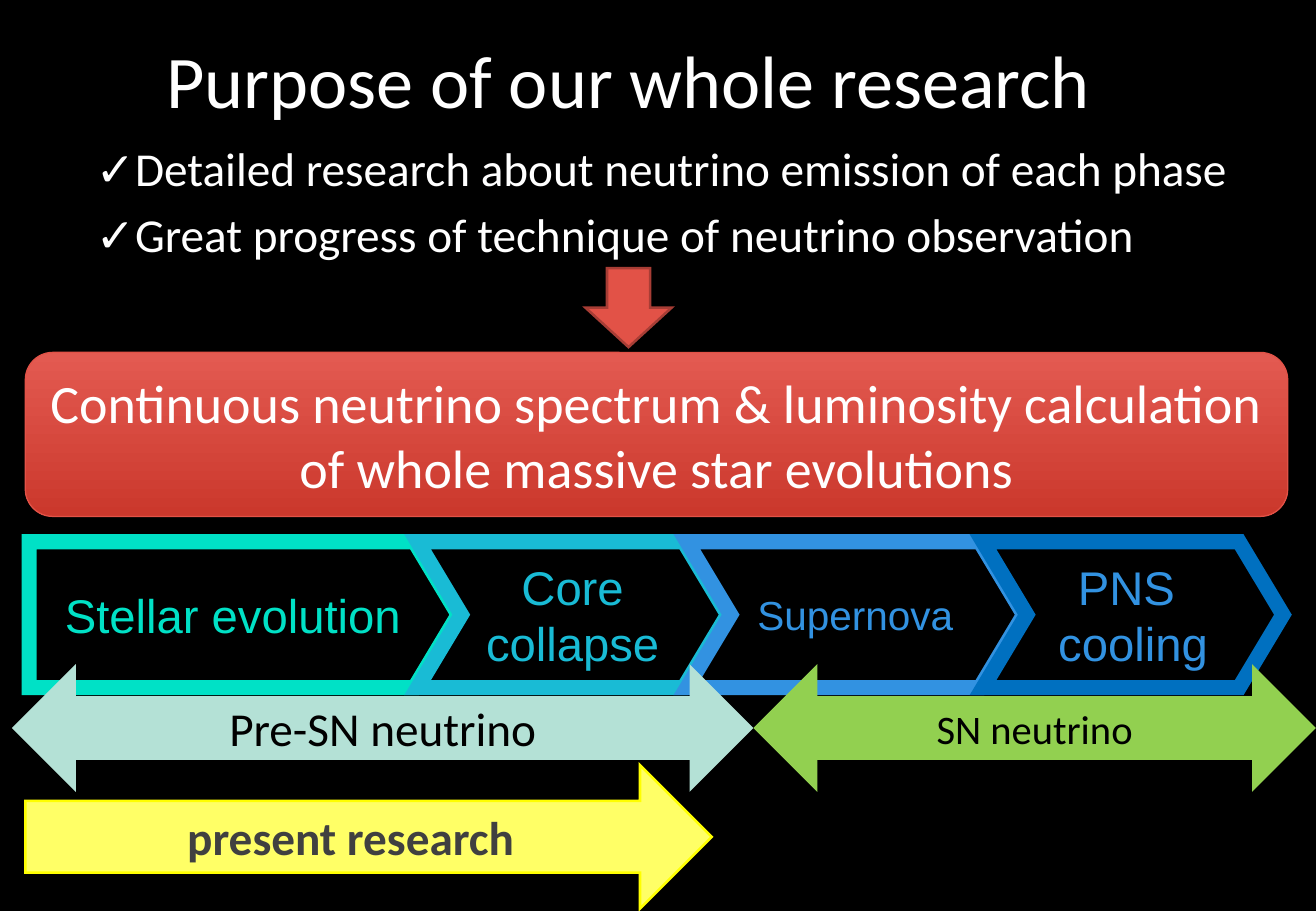
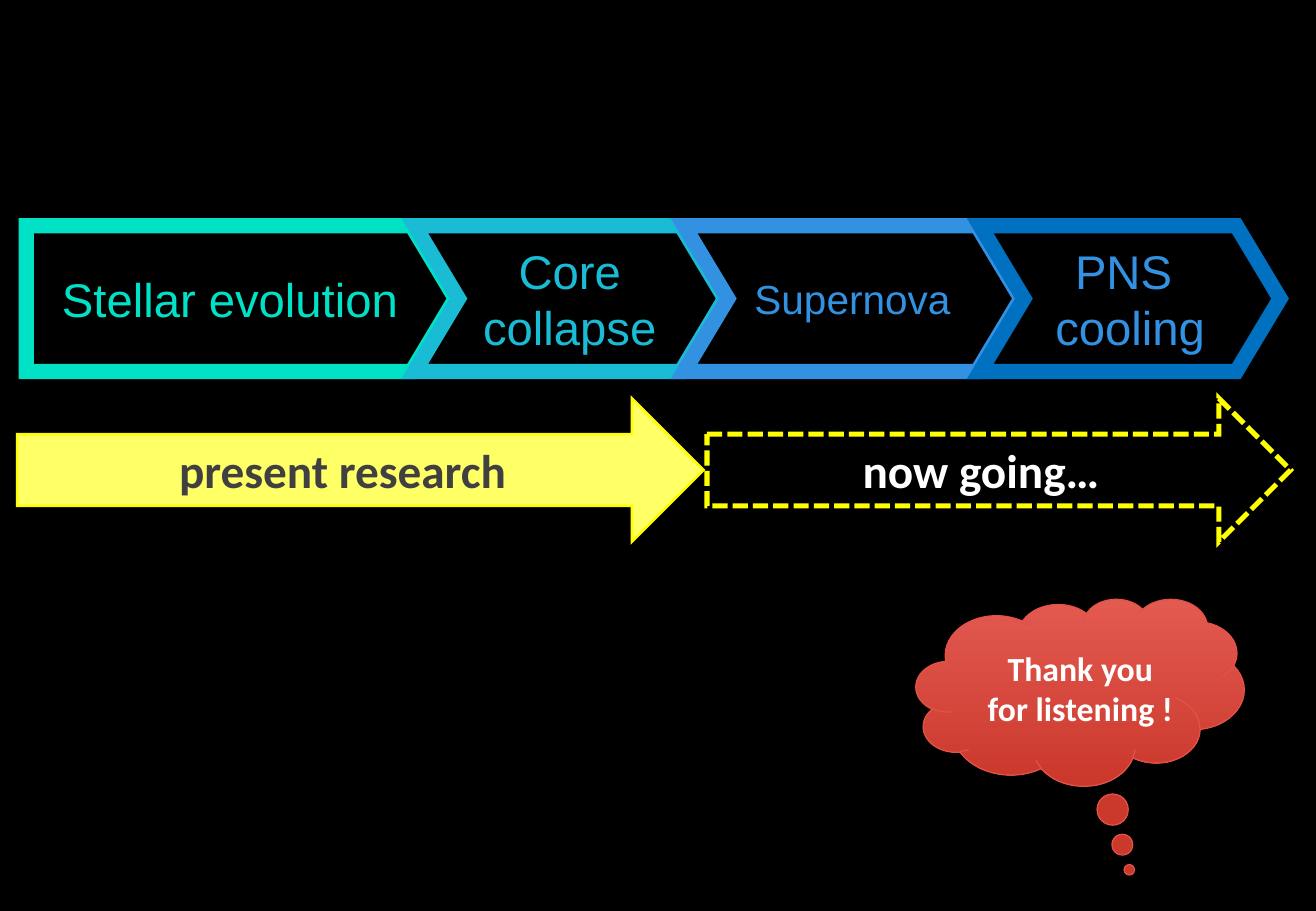
from dataclasses import dataclass
from typing import Optional

from lxml import etree
from pptx import Presentation
from pptx.dml.color import RGBColor
from pptx.enum import dml, shapes, text
from pptx.oxml.ns import qn
from pptx.util import Cm, Pt

BLACK = RGBColor(0x00, 0x00, 0x00)
WHITE = RGBColor(0xFF, 0xFF, 0xFF)
GREY = RGBColor(0x40, 0x40, 0x40)
RED = RGBColor(0xE2, 0x52, 0x47)
RED_DARK = RGBColor(0xA7, 0x3D, 0x35)
RED_TOP = RGBColor(0xE3, 0x5A, 0x51)
RED_BOTTOM = RGBColor(0xCB, 0x38, 0x2C)
TEAL = RGBColor(0x00, 0xE1, 0xC6)
CYAN = RGBColor(0x19, 0xBB, 0xD5)
SKY = RGBColor(0x32, 0x92, 0xE1)
BLUE = RGBColor(0x00, 0x70, 0xC0)
MINT = RGBColor(0xB4, 0xE1, 0xD6)
GREEN = RGBColor(0x92, 0xD0, 0x50)
YELLOW = RGBColor(0xFF, 0xFF, 0x00)
YELLOW_PALE = RGBColor(0xFF, 0xFF, 0x66)

MSO = shapes.MSO_SHAPE
STAGE_HEIGHT, STAGE_OVERLAP = 3.05, 0.85
RESEARCH_HEIGHT = 3.0


@dataclass(frozen=True)
class Font:
    size: float
    color: RGBColor = WHITE
    name: str = "Calibri"
    bold: bool = False


@dataclass(frozen=True)
class Paint:
    """One fill colour is solid, two run from top to bottom, none is empty."""
    fills: tuple[RGBColor, ...] = ()
    line: Optional[RGBColor] = None
    width: float = 0.75
    dashed: bool = False


@dataclass(frozen=True)
class Box:
    """Position and size in centimetres."""
    left: float
    top: float
    width: float
    height: float

    def lengths(self):
        return Cm(self.left), Cm(self.top), Cm(self.width), Cm(self.height)


@dataclass(frozen=True)
class Stage:
    lines: tuple[str, ...]
    width: float
    outline: RGBColor
    font: Font


RED_PANEL = Paint((RED_TOP, RED_BOTTOM), RED)
DONE = Paint((YELLOW_PALE,), YELLOW, 1.5)
ONGOING = Paint((), YELLOW, 3, dashed=True)

STAGES = (
    Stage(("Stellar evolution",), 8.97, TEAL, Font(28, TEAL, "Arial")),
    Stage(("Core", "collapse"), 6.48, CYAN, Font(28, CYAN, "Arial")),
    Stage(("Supernova",), 7.04, SKY, Font(24, SKY, "Arial")),
    Stage(("PNS ", "cooling"), 6.27, BLUE, Font(28, SKY, "Arial")),
)


def write(sp, lines: tuple[str, ...], font: Font,
          align=text.PP_ALIGN.CENTER, anchor=text.MSO_ANCHOR.MIDDLE,
          before: float = 0) -> None:
    tf = sp.text_frame
    tf.word_wrap = True
    tf.vertical_anchor = anchor
    for i, line in enumerate(lines):
        p = tf.add_paragraph() if i else tf.paragraphs[0]
        p.text = line
        p.alignment = align
        p.space_before = Pt(before)
        p.font.size = Pt(font.size)
        p.font.name = font.name
        p.font.bold = font.bold
        p.font.color.rgb = font.color


def paint(sp, look: Paint) -> None:
    sp.shadow.inherit = False
    if len(look.fills) == 2:
        sp.fill.gradient()
        sp.fill.gradient_angle = 270
        for position, (stop, color) in enumerate(zip(sp.fill.gradient_stops, look.fills)):
            stop.position = position
            stop.color.rgb = color
    elif look.fills:
        sp.fill.solid()
        sp.fill.fore_color.rgb = look.fills[0]
    else:
        sp.fill.background()
    if look.line is None:
        sp.line.fill.background()
        return
    sp.line.color.rgb = look.line
    sp.line.width = Pt(look.width)
    if look.dashed:
        sp.line.dash_style = dml.MSO_LINE.SQUARE_DOT
    ln = sp.line.color and sp.element.spPr.find(qn("a:ln"))
    etree.SubElement(ln, qn("a:miter"), lim="800000")


def add_block(slide, kind, box: Box, look: Paint,
              lines: tuple[str, ...] = (), font: Font = Font(28)):
    sp = slide.shapes.add_shape(kind, *box.lengths())
    paint(sp, look)
    if lines:
        write(sp, lines, font)
    return sp


def add_text(slide, box: Box, lines: tuple[str, ...], font: Font, **layout) -> None:
    write(slide.shapes.add_textbox(*box.lengths()), lines, font, **layout)


def add_stages(slide, left: float, top: float) -> None:
    for i, stage in enumerate(STAGES):
        sp = add_block(slide, MSO.CHEVRON if i else MSO.PENTAGON,
                       Box(left, top, stage.width, STAGE_HEIGHT),
                       Paint((), stage.outline, 9), stage.lines, stage.font)
        sp.adjustments[0] = 0.3
        tf = sp.text_frame
        tf.margin_left = tf.margin_right = tf.margin_top = tf.margin_bottom = Cm(0.25)
        left += stage.width - STAGE_OVERLAP


def add_research(slide, left: float, top: float, width: float = 14.35,
                 label: str = "present research", look: Paint = DONE,
                 color: RGBColor = GREY) -> None:
    add_block(slide, MSO.RIGHT_ARROW, Box(left, top, width, RESEARCH_HEIGHT),
              look, (label,), Font(28, color, bold=True))


def build_purpose(slide) -> None:
    add_text(slide, Box(0.36, 0.05, 25.58, 3.18),
             ("Purpose of our whole research",), Font(44))
    add_block(slide, MSO.ROUNDED_RECTANGLE, Box(0.53, 7.37, 26.39, 3.43), RED_PANEL,
              ("Continuous neutrino spectrum & luminosity calculation "
               "of whole massive star evolutions",), Font(32))
    add_stages(slide, 0.61, 11.33)
    for label, left, width, color, size in (
            ("Pre-SN neutrino", 0.25, 15.5, MINT, 28),
            ("SN neutrino", 15.75, 11.76, GREEN, 24)):
        add_block(slide, MSO.LEFT_RIGHT_ARROW, Box(left, 13.89, width, 2.67),
                  Paint((color,)), (label,), Font(size, BLACK))
    add_research(slide, 0.53, 16)
    add_text(slide, Box(1.75, 2.79, 25, 3.38),
             ("✓Detailed research about neutrino emission of each phase",
              "✓Great progress of technique of neutrino observation"),
             Font(28), align=text.PP_ALIGN.LEFT, anchor=text.MSO_ANCHOR.TOP, before=5.6)
    add_block(slide, MSO.DOWN_ARROW, Box(12.24, 5.61, 1.8, 1.65),
              Paint((RED,), RED_DARK, 1.5))


def build_outlook(slide) -> None:
    add_stages(slide, 0.55, 4.72)
    add_research(slide, 0.36, 8.33)
    add_research(slide, 14.78, 8.33, 12.2, "now going…", ONGOING, WHITE)
    cloud = add_block(slide, MSO.CLOUD_CALLOUT, Box(19.15, 12.52, 6.86, 3.91), RED_PANEL,
                      ("Thank you for listening !",), Font(20, bold=True))
    cloud.adjustments[0], cloud.adjustments[1] = 0.15, 0.95
    tf = cloud.text_frame
    tf.margin_left = Cm(0.5)
    tf.margin_right = tf.margin_top = tf.margin_bottom = 0


def main() -> None:
    prs = Presentation()
    prs.slide_width, prs.slide_height = Cm(27.51), Cm(19.05)
    backdrop = prs.slide_master.background.fill
    backdrop.solid()
    backdrop.fore_color.rgb = BLACK
    for build in (build_purpose, build_outlook):
        build(prs.slides.add_slide(prs.slide_layouts[6]))
    prs.save("out.pptx")


if __name__ == "__main__":
    main()
